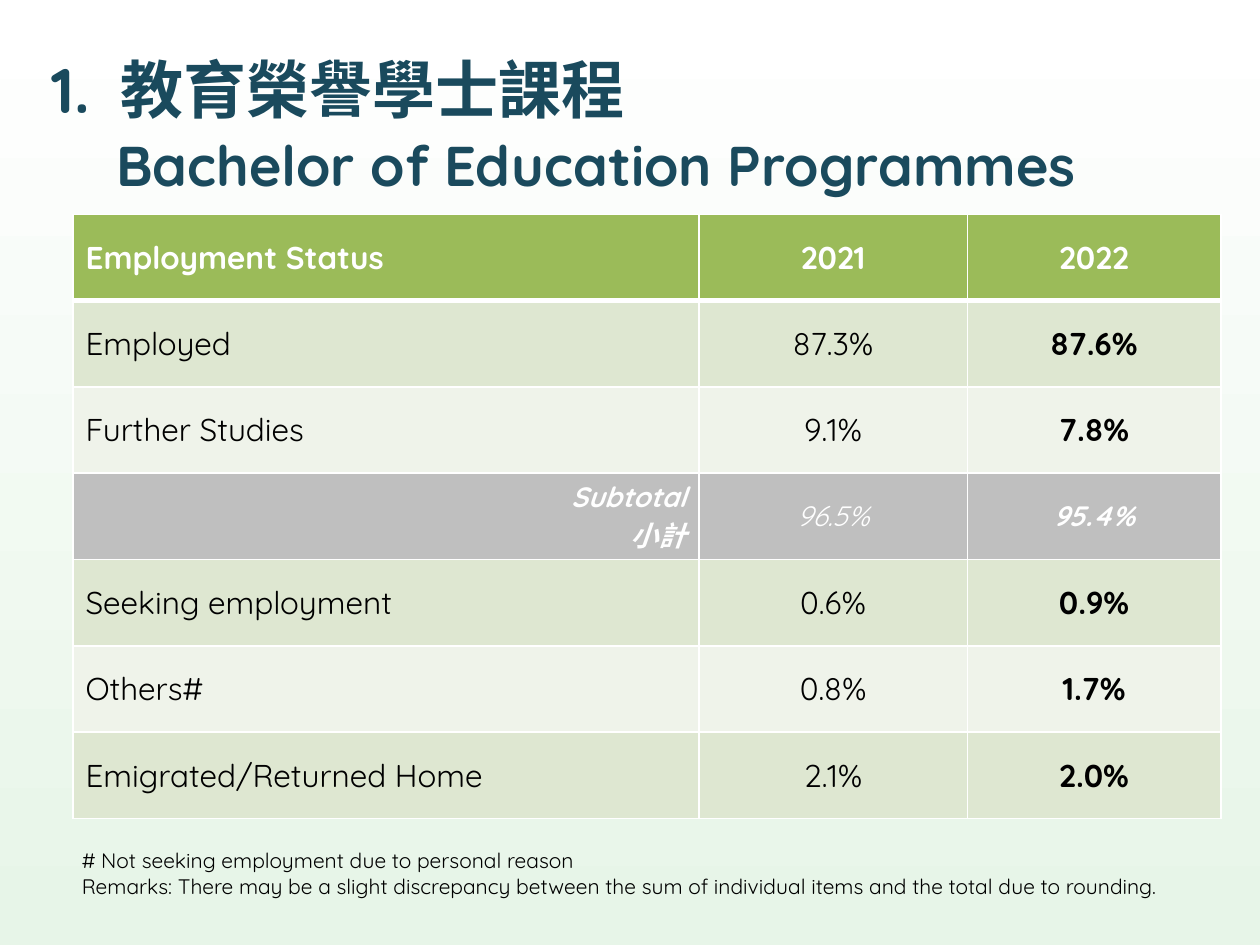
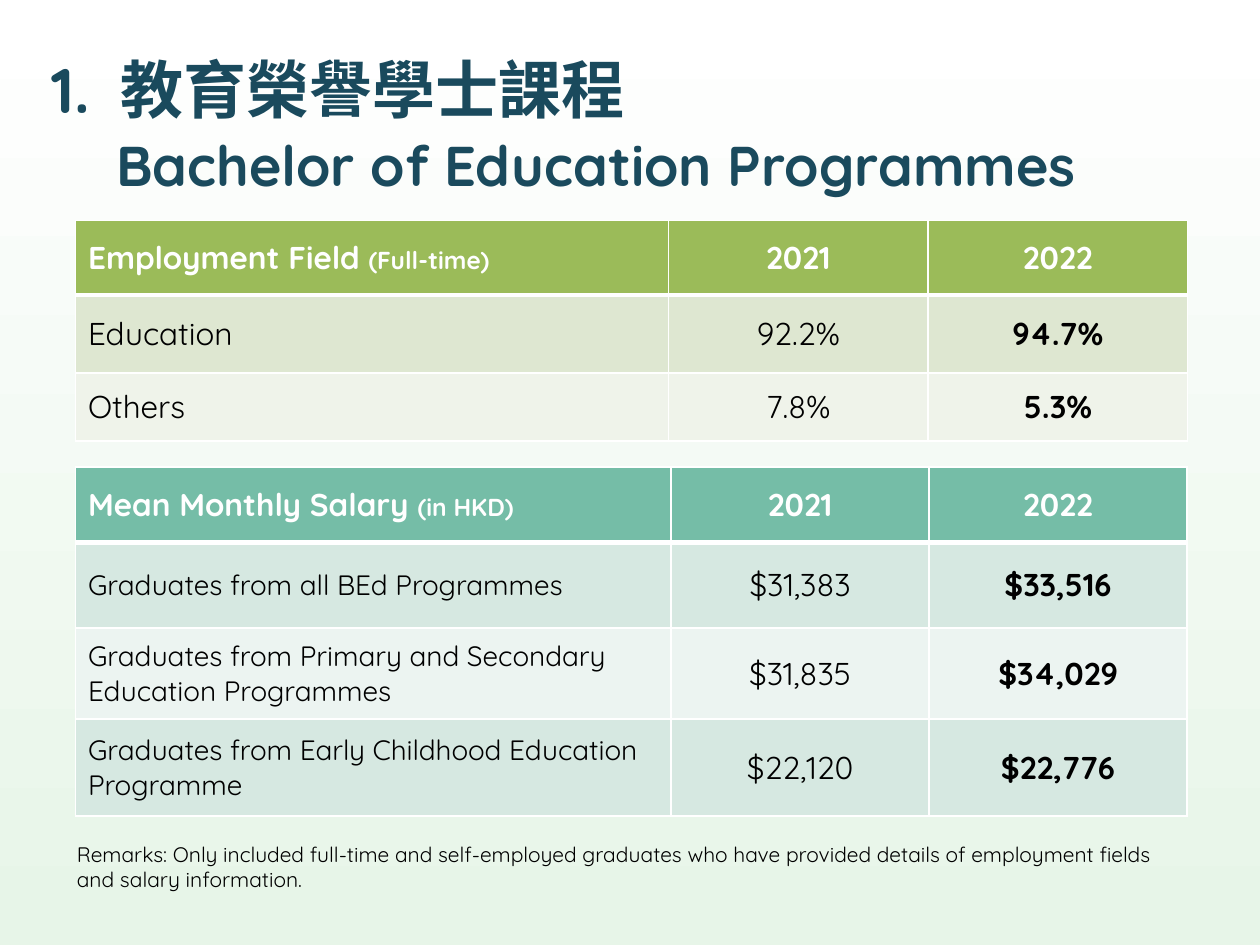
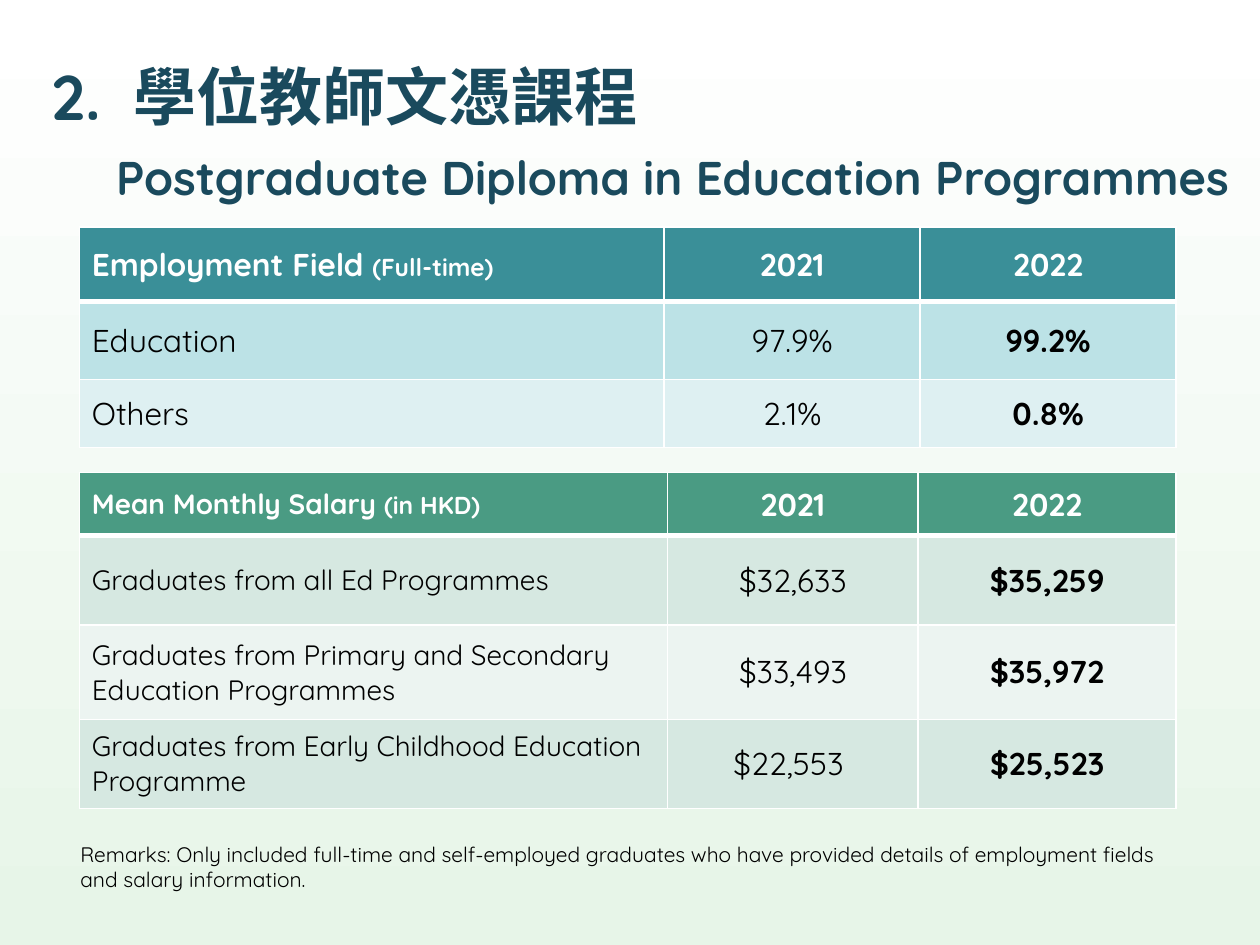
from lxml.etree import SubElement
from pptx import Presentation
from pptx.dml.color import RGBColor
from pptx.enum.text import MSO_ANCHOR, PP_ALIGN
from pptx.oxml import parse_xml
from pptx.oxml.ns import nsdecls, qn
from pptx.util import Cm, Pt

COLORS = {
    "title": "1A4A5D", "text": "000000", "white": "FFFFFF",
    "background_end": "E7F5E8", "subtotal": "BFBFBF",
}
# Header, odd row and even row fills
THEMES = {
    "lime": ("9BBB59", "DEE7D1", "EFF3EA"),
    "mint": ("75BDA7", "D6E8E1", "ECF4F1"),
    "teal": ("3A8F98", "BCE2E6", "DEF0F2"),
    "green": ("4A9B83", "D6E8E1", "ECF4F1"),
}
YEARS = ["2021", "2022"]
FIELD_HEADER = ["Employment Field |(Full-time)", *YEARS]
SALARY_HEADER = ["Mean Monthly Salary |(in HKD)", *YEARS]
FIELD_ROWS = [1.5, 1.57, 1.37]
PRIMARY_SECONDARY = "Graduates from Primary and Secondary Education Programmes"
EARLY_CHILDHOOD = "Graduates from Early Childhood Education Programme"
SALARY_REMARK = ("Remarks: Only included full-time and self-employed graduates who have "
                 "provided details of employment fields and salary information.")


def rgb(color):
    return RGBColor.from_string(COLORS.get(color, color))


class Deck:
    """Holds the shared style and the slide being built."""

    font = "Quicksand"

    def __init__(self):
        self.presentation = Presentation()
        self.presentation.slide_width = Cm(25.4)
        self.presentation.slide_height = Cm(19.05)
        self.slide = None
        # Background shared by every slide
        fill = self.presentation.slide_master.background.fill
        fill.gradient()
        fill.gradient_angle = 270
        for stop, color in zip(fill.gradient_stops, ("white", "background_end")):
            stop.color.rgb = rgb(color)

    def add_slide(self):
        self.slide = self.presentation.slides.add_slide(self.presentation.slide_layouts[6])

    def add_run(self, paragraph, text, color="text", **format_values):
        run = paragraph.add_run()
        run.text = text
        run.font.color.rgb = rgb(color)
        for name, value in {"name": self.font, "bold": False, **format_values}.items():
            setattr(run.font, name, value)

    def add_text_frame(self, left, top, width, height):
        shape = self.slide.shapes.add_textbox(Cm(left), Cm(top), Cm(width), Cm(height))
        shape.text_frame.word_wrap = True
        return shape.text_frame

    def add_title(self, number, chinese, english, top=0.79, english_size=32, chinese_stop=1.4):
        text_frame = self.add_text_frame(0.79, top, 24.4, 3.81)
        heading = text_frame.paragraphs[0]
        heading.line_spacing = Pt(46)
        tab_list = SubElement(heading._p.get_or_add_pPr(), qn("a:tabLst"))
        SubElement(tab_list, qn("a:tab"), pos=str(Cm(chinese_stop)), algn="l")
        self.add_run(heading, f"{number}\t{chinese}", "title", size=Pt(36), bold=True)

        subheading = text_frame.add_paragraph()
        subheading.line_spacing = Pt(41)
        subheading._p.get_or_add_pPr().set("marL", str(Cm(1.3)))
        self.add_run(subheading, english, "title", size=Pt(english_size), bold=True)

    def add_remarks(self, left, top, width, *lines):
        text_frame = self.add_text_frame(left, top, width, 1.27)
        for index, line in enumerate(lines):
            paragraph = text_frame.add_paragraph() if index else text_frame.paragraphs[0]
            self.add_run(paragraph, line, size=Pt(12))

    def add_borders(self, cell, top, bottom):
        properties = cell._tc.get_or_add_tcPr()
        widths = {"lnL": 1, "lnR": 1, "lnT": top, "lnB": bottom}
        for index, (side, width) in enumerate(widths.items()):
            properties.insert(index, parse_xml(
                f'<a:{side} {nsdecls("a")} w="{Pt(width)}"><a:solidFill>'
                f'<a:srgbClr val="{COLORS["white"]}"/></a:solidFill></a:{side}>'))

    def fill_cell(self, cell, text, fill, alignment, sizes, **format_values):
        cell.fill.solid()
        cell.fill.fore_color.rgb = rgb(fill)
        cell.vertical_anchor = MSO_ANCHOR.MIDDLE
        for index, line in enumerate(text.split("\n")):
            text_frame = cell.text_frame
            paragraph = text_frame.add_paragraph() if index else text_frame.paragraphs[0]
            paragraph.alignment = alignment
            for part, size in zip(line.split("|"), sizes):
                self.add_run(paragraph, part, size=Pt(size), **format_values)

    def add_table(self, left, top, widths, heights, theme, rows,
                  header_size=18, label_size=18, subtotal_row=None):
        table = self.slide.shapes.add_table(
            len(rows), len(widths), Cm(left), Cm(top),
            Cm(sum(widths)), Cm(sum(heights))).table
        table.horz_banding = False
        for column, width in zip(table.columns, widths):
            column.width = Cm(width)
        for row, height in zip(table.rows, heights):
            row.height = Cm(height)

        header_fill, odd_fill, even_fill = THEMES[theme]
        for r, values in enumerate(rows):
            header, subtotal = r == 0, r == subtotal_row
            fill = header_fill if header else odd_fill if r % 2 else even_fill
            # The band restarts below a subtotal row
            if subtotal_row and r > subtotal_row:
                fill = odd_fill if (r - subtotal_row) % 2 else even_fill
            if subtotal:
                fill = "subtotal"
            for c, text in enumerate(values):
                size = 16 if subtotal else 18
                if c == 0 and not subtotal:
                    size = header_size if header else label_size
                alignment = PP_ALIGN.CENTER
                if c == 0:
                    alignment = PP_ALIGN.RIGHT if subtotal else PP_ALIGN.LEFT
                cell = table.cell(r, c)
                self.fill_cell(
                    cell, text, fill, alignment, (size, 14),
                    color="white" if header or subtotal else "text",
                    bold=header or c == 2 or (subtotal and c == 0), italic=subtotal)
                self.add_borders(cell, 3 if r == 1 else 1, 3 if header else 1)


def main():
    deck = Deck()
    bachelor = ("1.", "教育榮譽學士課程", "Bachelor of Education Programmes")

    # Bachelor: employment status
    deck.add_slide()
    deck.add_title(*bachelor)
    deck.add_table(1.47, 4.32, [12.62, 5.41, 5.11], [1.74] * 7, "lime", [
        ["Employment Status", *YEARS],
        ["Employed", "87.3%", "87.6%"],
        ["Further Studies", "9.1%", "7.8%"],
        ["Subtotal\n小計", "96.5%", "95.4%"],
        ["Seeking employment", "0.6%", "0.9%"],
        ["Others#", "0.8%", "1.7%"],
        ["Emigrated/Returned Home", "2.1%", "2.0%"],
    ], subtotal_row=3)
    deck.add_remarks(
        1.4, 16.97, 23.39, "# Not seeking employment due to personal reason",
        "Remarks: There may be a slight discrepancy between the sum of individual items "
        "and the total due to rounding.")

    # Bachelor: employment field and salary
    deck.add_slide()
    deck.add_title(*bachelor)
    deck.add_table(1.52, 4.45, [11.96, 5.23, 5.23], FIELD_ROWS, "lime", [
        FIELD_HEADER,
        ["Education", "92.2%", "94.7%"],
        ["Others", "7.8%", "5.3%"],
    ])
    deck.add_table(1.52, 9.41, [12.01, 5.2, 5.2], [1.52, 1.73, 1.83, 1.96], "mint", [
        SALARY_HEADER,
        ["Graduates from all BEd Programmes", "$31,383", "$33,516"],
        [PRIMARY_SECONDARY, "$31,835", "$34,029"],
        [EARLY_CHILDHOOD, "$22,120", "$22,776"],
    ], label_size=16)
    deck.add_remarks(1.3, 16.84, 22.86, SALARY_REMARK)

    # Postgraduate diploma: employment field and salary
    deck.add_slide()
    deck.add_title("2.", "學位教師文憑課程", "Postgraduate Diploma in Education Programmes",
                   top=0.94, english_size=27, chinese_stop=1.65)
    deck.add_table(1.6, 4.58, [11.79, 5.16, 5.16], FIELD_ROWS, "teal", [
        FIELD_HEADER,
        ["Education", "97.9%", "99.2%"],
        ["Others", "2.1%", "0.8%"],
    ])
    deck.add_table(1.6, 9.53, [11.86, 5.05, 5.2], [1.27, 1.8, 1.9, 1.8], "green", [
        SALARY_HEADER,
        ["Graduates from all Ed Programmes", "$32,633", "$35,259"],
        [PRIMARY_SECONDARY, "$33,493", "$35,972"],
        [EARLY_CHILDHOOD, "$22,553 ", "$25,523"],
    ], header_size=16, label_size=16)
    deck.add_remarks(1.37, 16.84, 22.71, SALARY_REMARK)

    deck.presentation.save("out.pptx")


if __name__ == "__main__":
    main()
